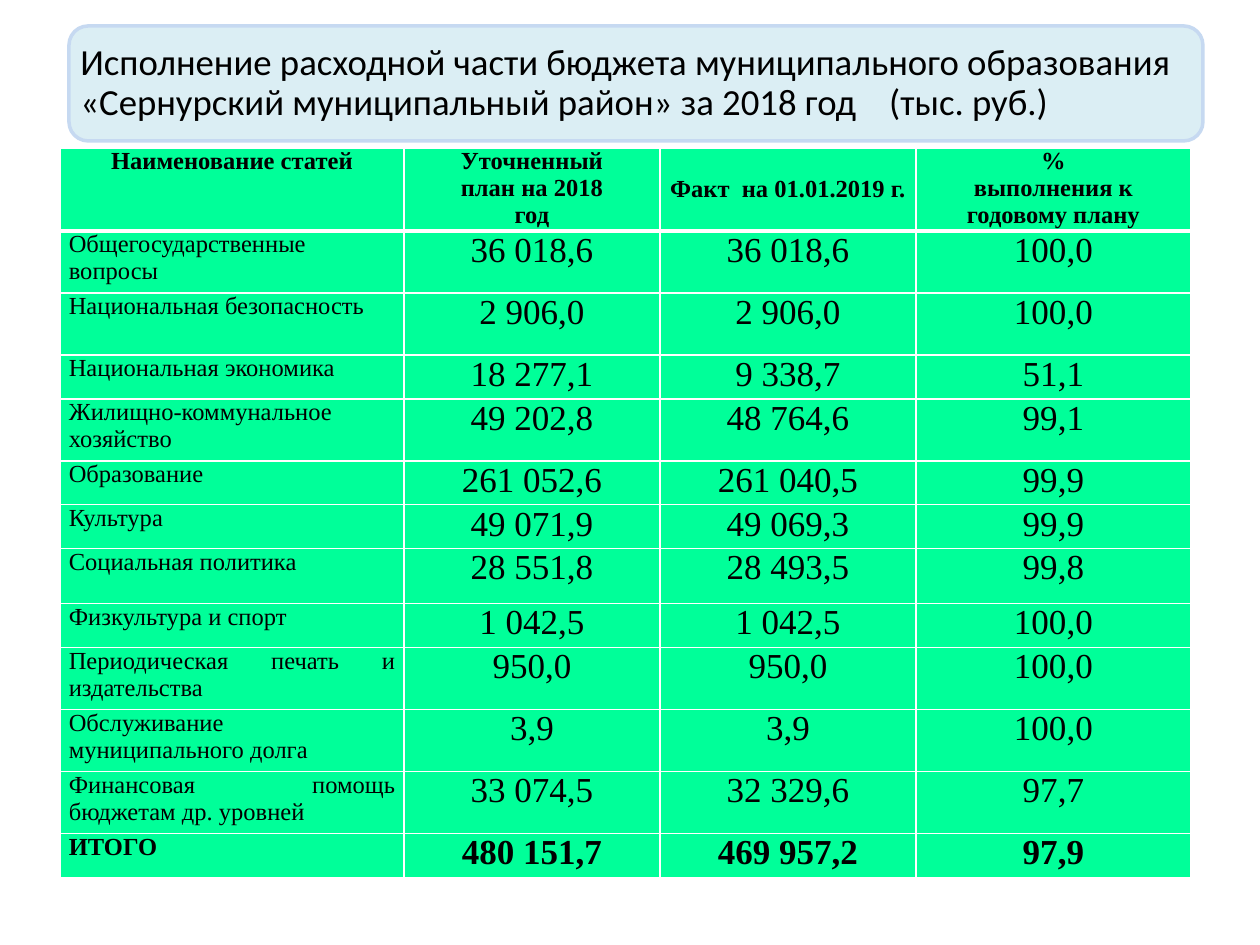
from lxml import etree
from pptx import Presentation
from pptx import util as u
from pptx.dml.color import RGBColor
from pptx.enum import shapes, text
from pptx.oxml import ns

PX = 914400 // 126
HEX = {"panel": "DBEEF4", "edge": "C6D9F1", "cell": "00FF99",
       "rule": "FFFFFF", "ink": "000000"}
TITLE = ("Исполнение расходной части бюджета муниципального образования "
         "«Сернурский муниципальный район» за 2018 год\u00a0\u00a0\u00a0 (тыс. руб.)")
BOX = (69, 26, 1134, 115)
HEAD = ("Наименование статей", "Уточненный\nплан на 2018\nгод",
        "Факт  на 01.01.2019 г.", "%\nвыполнения к\nгодовому плану")
# row height in px, name, plan, fact, percent
ROWS = [
    (62, "Общегосударственные вопросы", "36 018,6", "36 018,6", "100,0"),
    (62, "Национальная безопасность", "2 906,0", "2 906,0", "100,0"),
    (44, "Национальная экономика", "18 277,1", "9 338,7", "51,1"),
    (62, "Жилищно-коммунальное хозяйство", "49 202,8", "48 764,6", "99,1"),
    (44, "Образование", "261 052,6", "261 040,5", "99,9"),
    (44, "Культура", "49 071,9", "49 069,3", "99,9"),
    (55, "Социальная политика", "28 551,8", "28 493,5", "99,8"),
    (44, "Физкультура и спорт", "1 042,5", "1 042,5", "100,0"),
    (62, "Периодическая печать и издательства", "950,0", "950,0", "100,0"),
    (62, "Обслуживание муниципального долга", "3,9", "3,9", "100,0"),
    (62, "Финансовая помощь бюджетам др. уровней", "33 074,5", "32 329,6", "97,7"),
    (44, "ИТОГО", "480 151,7", "469 957,2", "97,9"),
]
COLS = (344, 256, 256, 275)
HEAD_H = 83
LEFT_ROWS = 4  # names after these rows are justified
ALIGN = text.PP_ALIGN


def emu(*px):
    return [u.Emu(n * PX) for n in px]


def color(name):
    return RGBColor.from_string(HEX[name])


def style(para, face, size, align, bold=False):
    para.alignment = align
    font = para.font
    font.name, font.size, font.bold = face, u.Pt(size), bold
    font.color.rgb = color("ink")


def border(cell, widths):
    """Draw cell sides; widths maps L, R, T, B to points."""
    props = cell._tc.get_or_add_tcPr()
    for side, width in widths.items():
        line = etree.SubElement(props, ns.qn("a:ln" + side), w=str(u.Pt(width)))
        fill = etree.SubElement(line, ns.qn("a:solidFill"))
        etree.SubElement(fill, ns.qn("a:srgbClr"), val=HEX["rule"])


def add_title(slide):
    panel = slide.shapes.add_shape(shapes.MSO_SHAPE.ROUNDED_RECTANGLE, *emu(*BOX))
    panel.shadow.inherit = False
    panel.fill.solid()
    panel.fill.fore_color.rgb = color("panel")
    panel.line.color.rgb = color("edge")
    panel.line.width = u.Pt(2)
    title = slide.shapes.title
    title._element.addprevious(panel._element)  # panel goes behind the title
    title.left, title.top, title.width, title.height = emu(*BOX)
    frame = title.text_frame
    frame.text = TITLE
    frame.word_wrap = True
    frame.auto_size = text.MSO_AUTO_SIZE.NONE
    frame.vertical_anchor = text.MSO_ANCHOR.MIDDLE
    frame.margin_left = frame.margin_right = u.Inches(0.09)
    frame.margin_top = frame.margin_bottom = u.Inches(0.09)
    para = frame.paragraphs[0]
    style(para, "Calibri", 21, ALIGN.LEFT)
    para.line_spacing = 0.9


def add_table(slide):
    highs = [HEAD_H] + [row[0] for row in ROWS]
    data = [HEAD] + [row[1:] for row in ROWS]
    last = len(data) - 1
    table = slide.shapes.add_table(
        len(data), len(COLS), *emu(60, 148, sum(COLS), sum(highs))).table
    for col, wide in zip(table.columns, emu(*COLS)):
        col.width = wide
    for row, high in zip(table.rows, emu(*highs)):
        row.height = high
    for r, row in enumerate(data):
        for c, words in enumerate(row):
            cell = table.cell(r, c)
            cell.margin_left = cell.margin_right = u.Inches(0.07)
            cell.margin_top = cell.margin_bottom = 0
            border(cell, {"L": 1, "R": 1, "T": 3 if r == 1 else 1,
                          "B": 3 if r == 0 else 1})
            cell.fill.solid()
            cell.fill.fore_color.rgb = color("cell")
            cell.text = words
            if r == 0 or c > 0:
                align = ALIGN.CENTER
            else:
                align = ALIGN.LEFT if r <= LEFT_ROWS else ALIGN.JUSTIFY
            size = 20 if r and c else 14
            for para in cell.text_frame.paragraphs:
                style(para, "Times New Roman", size, align, r in (0, last))
    table.cell(0, 2).vertical_anchor = text.MSO_ANCHOR.MIDDLE


def main():
    deck = Presentation()
    deck.slide_width, deck.slide_height = u.Inches(10), u.Inches(7.5)
    slide = deck.slides.add_slide(deck.slide_layouts[5])
    add_title(slide)
    add_table(slide)
    deck.save("out.pptx")


if __name__ == "__main__":
    main()
